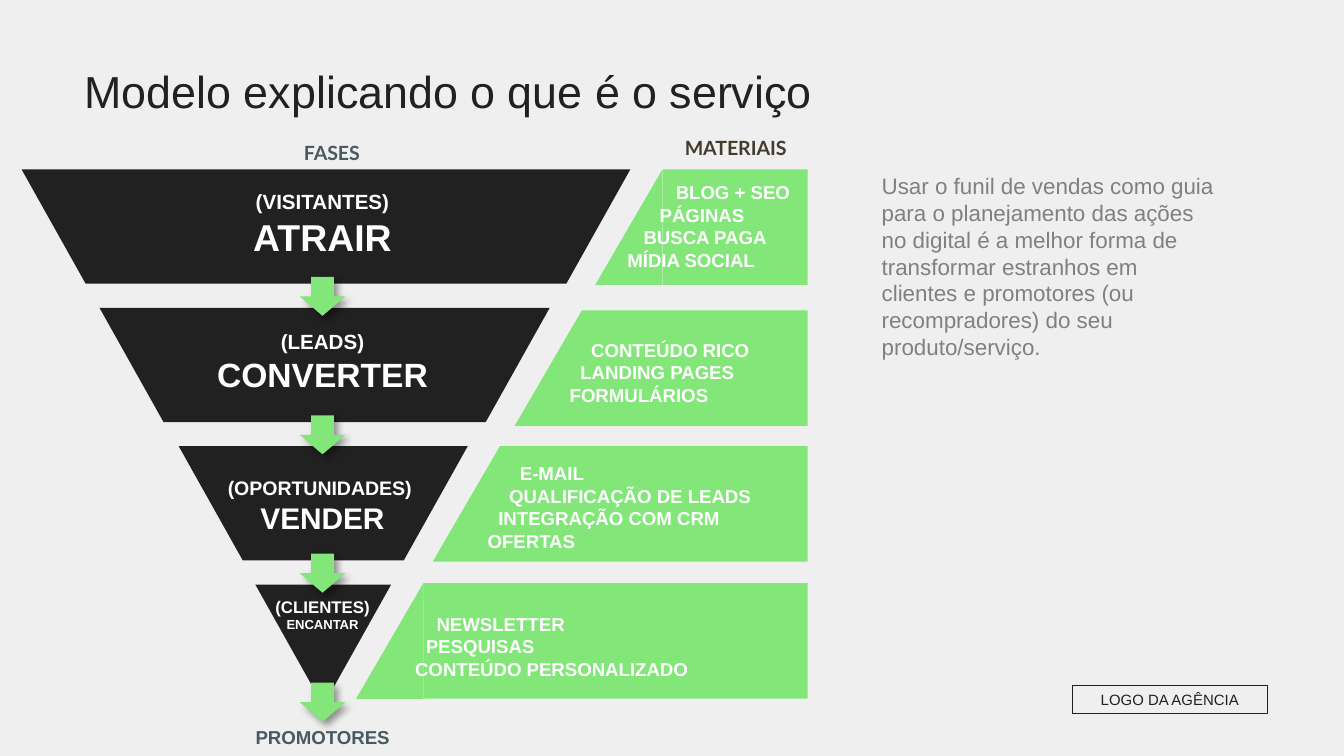
import dataclasses

import pptx
import pptx.dml.color
import pptx.enum.shapes
import pptx.enum.text
import pptx.oxml
import pptx.oxml.ns
import pptx.util
from pptx.util import Inches

SHAPE = pptx.enum.shapes.MSO_SHAPE
ALIGN = pptx.enum.text.PP_ALIGN
ANCHOR = pptx.enum.text.MSO_ANCHOR


@dataclasses.dataclass(frozen=True)
class Theme:
    """Colours, fonts and type sizes of the slide."""
    back: str = "EFEFEF"
    dark: str = "212121"
    green: str = "82E678"
    white: str = "FFFFFF"
    slate: str = "475A60"
    brown: str = "433C2E"
    grey: str = "808080"
    font: str = "Arial"
    label_font: str = "Lato"
    title: float = 24
    body: float = 12
    label: float = 10.5
    item: float = 10
    logo: float = 8
    audiences: tuple = (11, 11, 10.5, 9)
    names: tuple = (20, 18, 16, 7)


T = Theme()

# name, audience, left, width, text offset, text height
STAGES = [
    ("ATRAIR", "(VISITANTES)", 0.16, 4.53, 0.10, 0.62),
    ("CONVERTER", "(LEADS)", 0.74, 3.35, 0.11, 0.59),
    ("VENDER", "(OPORTUNIDADES) ", 1.33, 2.15, 0.17, 0.55),
    ("ENCANTAR", "(CLIENTES)", 1.90, 1.01, 0.04, 0.37),
]

# left, top, text left, text top, text width, first indent, indent step, items
MATERIALS = [
    (4.43, 1.26, 4.45, 1.30, 1.60, 0.12, 0.12,
     ["BLOG + SEO", "PÁGINAS", "BUSCA PAGA", "MÍDIA SOCIAL"]),
    (3.83, 2.31, 4.14, 2.47, 1.81, 0, 0.08,
     ["CONTEÚDO RICO", "LANDING PAGES", "FORMULÁRIOS"]),
    (3.22, 3.32, 3.53, 3.39, 2.24, 0, 0.08,
     ["E-MAIL", "QUALIFICAÇÃO DE LEADS", "INTEGRAÇÃO COM CRM", "OFERTAS"]),
    (2.65, 4.34, 2.99, 4.51, 2.92, 0, 0.08,
     ["NEWSLETTER", "PESQUISAS", "CONTEÚDO PERSONALIZADO"]),
]


def rgb(value):
    """Return a colour object for a hex string."""
    return pptx.dml.color.RGBColor.from_string(value)


def add_run(p, text, size, color, bold=False, font=T.font):
    """Add one formatted run to a paragraph."""
    r = p.add_run()
    r.text = text
    r.font.size = pptx.util.Pt(size)
    r.font.name = font
    r.font.bold = bold
    r.font.color.rgb = rgb(color)


def add_paragraph(tf, i, align=ALIGN.LEFT, indent=0.0):
    """Return paragraph i of a text frame, aligned and indented."""
    p = tf.paragraphs[0] if i == 0 else tf.add_paragraph()
    p.alignment = align
    pPr = p._p.get_or_add_pPr()
    pPr.set("marL", str(Inches(indent)))
    pPr.set("indent", "0")
    return p


def add_text(s, x, y, w, h):
    """Add a wrapping text box and return its text frame."""
    tf = s.shapes.add_textbox(Inches(x), Inches(y), Inches(w), Inches(h)).text_frame
    tf.word_wrap = True
    return tf


def add_label(s, x, y, w, h, text, size, color, font):
    """Add a one-line bold centred label."""
    p = add_paragraph(add_text(s, x, y, w, h), 0, ALIGN.CENTER)
    add_run(p, text, size, color, True, font)


def add_block(s, kind, x, y, w, h, fill=None):
    """Add a flat preset shape without outline."""
    sp = s.shapes.add_shape(kind, Inches(x), Inches(y), Inches(w), Inches(h))
    sp.shadow.inherit = False
    sp.line.fill.background()
    if fill:
        sp.fill.solid()
        sp.fill.fore_color.rgb = rgb(fill)
    else:
        sp.fill.background()
    return sp


def place(sp, x, y, w, h, anchor, margins=None):
    """Move a placeholder into a box and return its text frame."""
    sp.left, sp.top, sp.width, sp.height = map(Inches, (x, y, w, h))
    tf = sp.text_frame
    tf.word_wrap = True
    tf.auto_size = pptx.enum.text.MSO_AUTO_SIZE.NONE
    tf.vertical_anchor = anchor
    if margins is not None:
        tf.margin_left = tf.margin_right = tf.margin_top = tf.margin_bottom = margins
    return tf


def add_title(s, x, y, w, h, text):
    """Fill the title placeholder."""
    p = add_paragraph(place(s.shapes.title, x, y, w, h, ANCHOR.MIDDLE, 0), 0)
    p.line_spacing = 0.93
    add_run(p, text, T.title, T.dark)


def add_body(s, x, y, w, h, text):
    """Fill the body placeholder with plain unbulleted text."""
    p = add_paragraph(place(s.placeholders[1], x, y, w, h, ANCHOR.TOP), 0)
    p.space_before = pptx.util.Pt(0)
    p._p.get_or_add_pPr().append(pptx.oxml.parse_xml(
        f'<a:buNone {pptx.oxml.ns.nsdecls("a")}/>'))
    add_run(p, text, T.body, T.grey)


def add_stage(s, x, y, w, h, text_y, text_h, lines):
    """Draw one funnel stage with its audience and name."""
    sp = add_block(s, SHAPE.TRAPEZOID, x, y, w, h, T.dark)
    sp.rotation = 180
    sp.adjustments[0] = 0.56
    tf = add_text(s, 1.4, text_y, 2, text_h)
    for i, (text, size) in enumerate(lines):
        add_run(add_paragraph(tf, i, ALIGN.CENTER), text, size, T.white, True)


def add_material(s, x, y, right, h, text_x, text_y, text_w, first, step, items):
    """Draw one slanted material panel with its stepped list."""
    slant = 0.5
    add_block(s, SHAPE.RECTANGLE, x + slant, y, right - x - slant, h, T.green)
    sp = add_block(s, SHAPE.RIGHT_TRIANGLE, x, y, slant, h, T.green)
    sp._element.spPr.xfrm.set("flipH", "1")
    tf = add_text(s, text_x, text_y, text_w, 0.15 * len(items) + 0.16)
    for i, text in enumerate(items):
        p = add_paragraph(tf, i, indent=first + step * (len(items) - 1 - i))
        add_run(p, text, T.item, T.white, True)


def add_arrow(s, x, y, w, h):
    """Draw a down arrow with a soft shadow."""
    sp = add_block(s, SHAPE.DOWN_ARROW, x, y, w, h, T.green)
    effects = sp._element.spPr.find(pptx.oxml.ns.qn("a:effectLst"))
    effects.append(pptx.oxml.parse_xml(
        f'<a:outerShdw {pptx.oxml.ns.nsdecls("a")} blurRad="50800" dist="38100" '
        'dir="2700000" algn="tl" rotWithShape="0"><a:srgbClr val="000000">'
        '<a:alpha val="40000"/></a:srgbClr></a:outerShdw>'))


def add_logo_box(s, x, y, w, h, text):
    """Draw the outlined box that holds the agency label."""
    sp = add_block(s, SHAPE.RECTANGLE, x, y, w, h)
    sp.line.color.rgb = rgb(T.dark)
    sp.line.width = pptx.util.Pt(0.75)
    sp.text_frame.vertical_anchor = ANCHOR.MIDDLE
    add_run(add_paragraph(sp.text_frame, 0, ALIGN.CENTER), text, T.logo, T.dark)


def main():
    """Build and save the slide."""
    prs = pptx.Presentation()
    prs.slide_width = Inches(10)
    prs.slide_height = prs.slide_width * 9 // 16
    s = prs.slides.add_slide(prs.slide_layouts[1])
    s.background.fill.solid()
    s.background.fill.fore_color.rgb = rgb(T.back)
    add_title(s, 0.63, 0.47, 6.93, 0.45, "Modelo explicando o que é o serviço")
    add_body(s, 6.46, 1.23, 2.7, 1.52,
             "Usar o funil de vendas como guia para o planejamento das ações no "
             "digital é a melhor forma de transformar estranhos em clientes e "
             "promotores (ou recompradores) do seu produto/serviço.")
    for i, (name, audience, x, w, dy, text_h) in enumerate(STAGES):
        y = 1.26 + 1.03 * i
        add_stage(s, x, y, w, 0.85, y + dy, text_h,
                  [(audience, T.audiences[i]), (name, T.names[i])])
    for x, y, *content in MATERIALS:
        add_material(s, x, y, 6.01, 0.86, *content)
    for y in (2.06, 3.09, 4.12, 5.08):
        add_arrow(s, 2.23, y, 0.34, 0.29)
    add_label(s, 1.47, 1, 2, 0.28, "FASES", T.label, T.slate, T.label_font)
    add_label(s, 4.91, 0.96, 1.13, 0.28, "MATERIAIS", T.label, T.brown, T.label_font)
    add_label(s, 1.4, 5.35, 2, 0.27, "PROMOTORES", T.item, T.slate, T.font)
    add_logo_box(s, 7.98, 5.1, 1.45, 0.21, "LOGO DA AGÊNCIA")
    prs.save("out.pptx")


if __name__ == "__main__":
    main()
